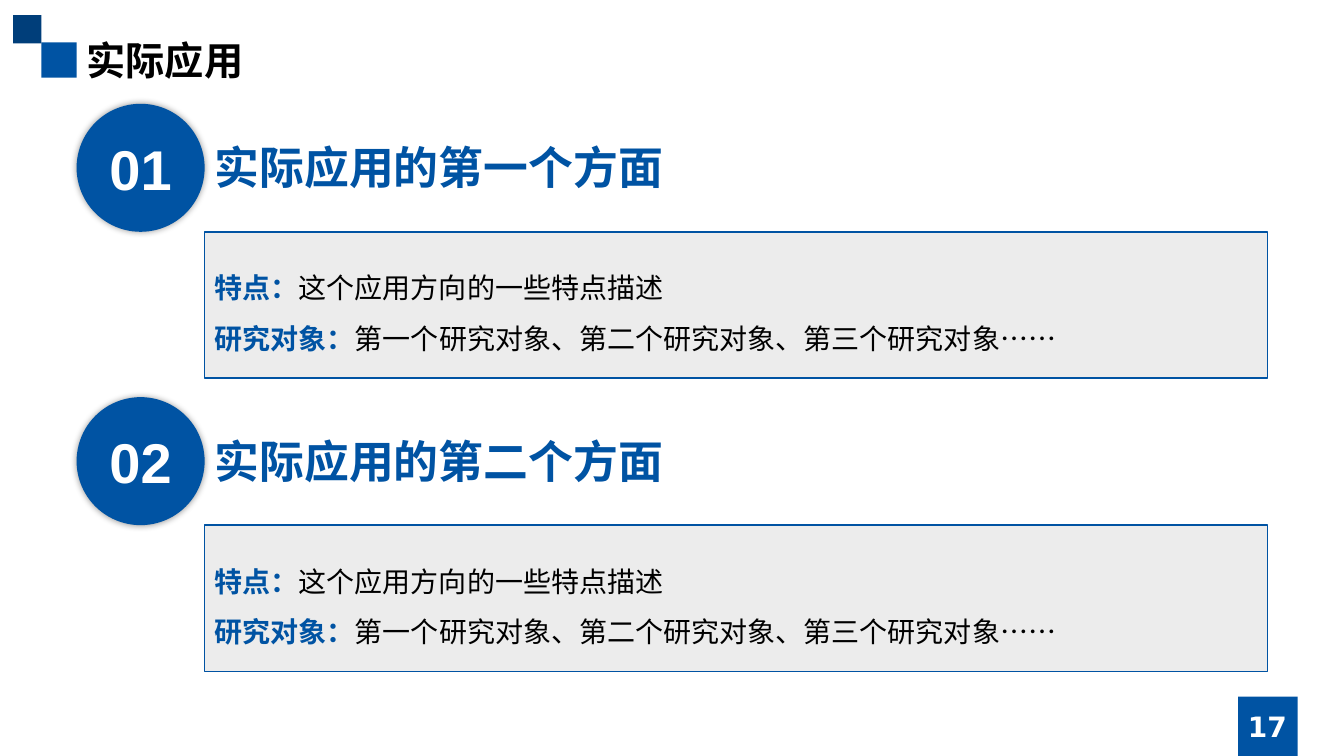
from lxml import etree
from pptx import Presentation
from pptx import util as u
from pptx.dml.color import RGBColor
from pptx.enum import shapes, text
from pptx.oxml.ns import qn

BLUE, NAVY, GREY, BLACK, WHITE = "0053A3", "003E7A", "ECECEC", "000000", "FFFFFF"
CHINESE, NUMERAL, BODY = "Noto Sans CJK SC", "Arial", "DejaVu Sans"


def colour(value):
    return RGBColor.from_string(value)


class SlideBuilder:
    """Holds the current slide and its style, and adds elements to it."""

    def __init__(self, slide):
        self.slide = slide

    def style_run(self, run, size, font, tint, bold=True):
        run.font.size = u.Pt(size)
        run.font.name = font
        run.font.bold = bold
        run.font.color.rgb = colour(tint)
        latin = run.font._element.find(qn("a:latin"))
        east_asian = etree.Element(qn("a:ea"), typeface=CHINESE)
        latin.addnext(east_asian)

    def set_words(self, shape, words, size, font, tint, align=text.PP_ALIGN.LEFT,
                  anchor=text.MSO_ANCHOR.TOP):
        frame = shape.text_frame
        frame.text = words
        frame.word_wrap = True
        frame.auto_size = text.MSO_AUTO_SIZE.NONE
        frame.vertical_anchor = anchor
        paragraph = frame.paragraphs[0]
        paragraph.alignment = align
        self.style_run(paragraph.runs[0], size, font, tint)

    def title(self, words, *box):
        shape = self.slide.shapes.title
        shape.left, shape.top, shape.width, shape.height = map(u.Inches, box)
        self.set_words(shape, words, 28, CHINESE, BLACK)

    def shape(self, kind, box, fill, line=None, parent=None):
        shape = (parent or self.slide).shapes.add_shape(kind, *map(u.Inches, box))
        shape.shadow.inherit = False
        shape.fill.solid()
        shape.fill.fore_color.rgb = colour(fill)
        if line:
            shape.line.color.rgb = colour(line)
            shape.line.width = u.Pt(1)
        else:
            shape.line.fill.background()
        return shape

    def square(self, left, top, side, fill):
        self.shape(shapes.MSO_SHAPE.RECTANGLE, (left, top, side, side), fill)

    def label(self, box, words, size, font, tint, **layout):
        shape = self.slide.shapes.add_textbox(*map(u.Inches, box))
        self.set_words(shape, words, size, font, tint, **layout)

    def badge(self, left, top, side, number):
        circle = self.shape(shapes.MSO_SHAPE.OVAL, (left, top, side, side), BLUE)
        self.set_words(circle, number, 40, NUMERAL, WHITE,
                       text.PP_ALIGN.CENTER, text.MSO_ANCHOR.MIDDLE)
        # Soft glow-like shadow
        effects = circle._element.spPr.find(qn("a:effectLst"))
        shadow = etree.SubElement(effects, qn("a:outerShdw"), blurRad=str(u.Pt(5)),
                                  dist="0", dir="0", algn="ctr", rotWithShape="0")
        shade = etree.SubElement(shadow, qn("a:srgbClr"), val=BLACK)
        etree.SubElement(shade, qn("a:alpha"), val="40000")

    def panel(self, left, top, width, height, details):
        group = self.slide.shapes.add_group_shape()
        self.shape(shapes.MSO_SHAPE.RECTANGLE, (left, top, width, height), GREY, BLUE, group)
        box = (left, top + 0.17, width, 1.11)
        frame = group.shapes.add_textbox(*map(u.Inches, box)).text_frame
        frame.word_wrap = True
        for index, (term, description) in enumerate(details):
            paragraph = frame.add_paragraph() if index else frame.paragraphs[0]
            paragraph.line_spacing = 1.5
            for words, tint, bold in ((term, BLUE, True), (description, BLACK, False)):
                run = paragraph.add_run()
                run.text = words
                self.style_run(run, 20, BODY, tint, bold)


def main():
    presentation = Presentation()
    presentation.slide_width, presentation.slide_height = u.Inches(13.33), u.Inches(7.5)
    slide = presentation.slides.add_slide(presentation.slide_layouts[5])
    builder = SlideBuilder(slide)

    # Header
    builder.square(0.41, 0.42, 0.35, BLUE)
    builder.square(0.13, 0.15, 0.28, NAVY)
    builder.title("实际应用", 0.76, 0.31, 5.91, 0.57)

    # Page number
    builder.square(12.28, 6.91, 0.59, BLUE)
    builder.label((11.81, 7.01, 1.52, 0.4), "17", 20, BODY, WHITE,
                  align=text.PP_ALIGN.CENTER, anchor=text.MSO_ANCHOR.MIDDLE)

    # Numbered applications
    details = [
        ("特点：", "这个应用方向的一些特点描述"),
        ("研究对象：", "第一个研究对象、第二个研究对象、第三个研究对象……"),
    ]
    headings = ["实际应用的第一个方面", "实际应用的第二个方面"]
    left, first_top, pitch, diameter = 0.76, 1.03, 2.91, 1.27
    for index, heading in enumerate(headings):
        top = first_top + index * pitch
        builder.badge(left, top, diameter, f"{index + 1:02}")
        builder.label((left + diameter, top + 0.31, 5.91, 0.64), heading, 32, CHINESE, BLUE)
        builder.panel(left + diameter, top + diameter, 10.54, 1.45, details)

    presentation.save("out.pptx")


if __name__ == "__main__":
    main()
